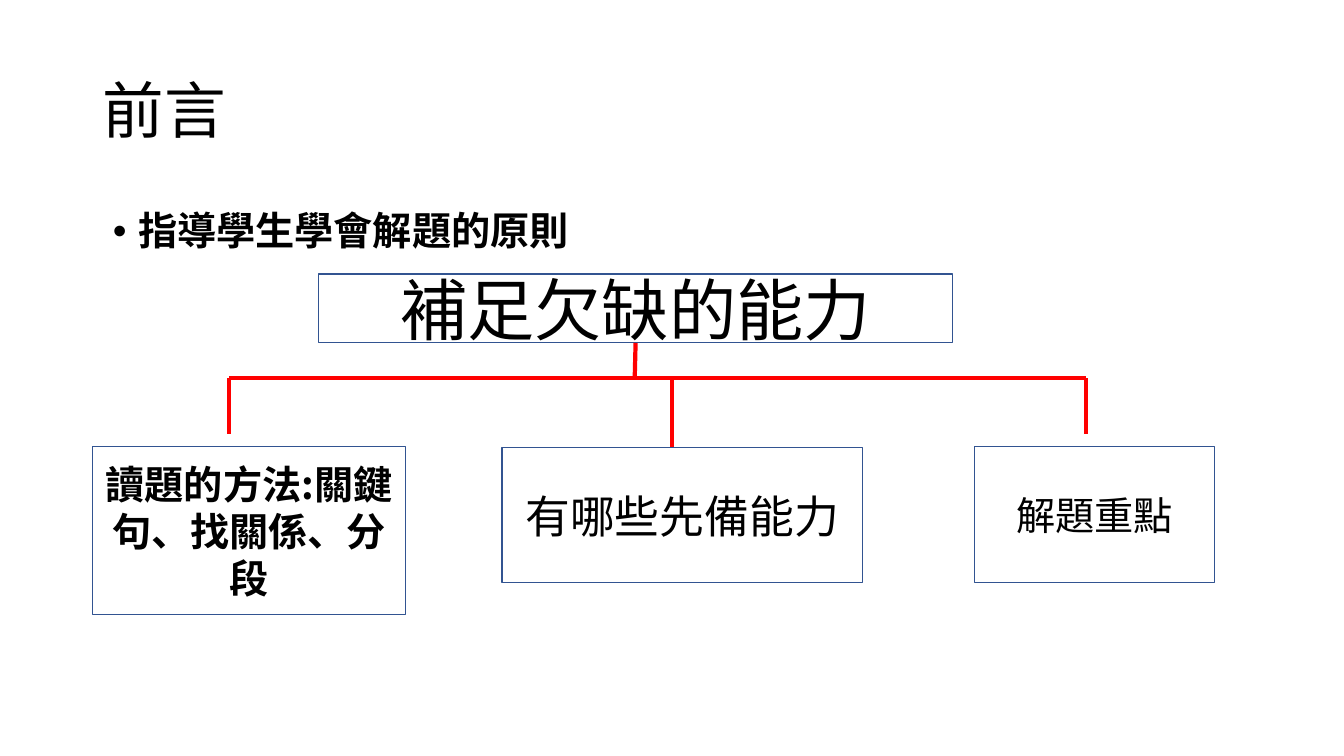
from lxml.etree import SubElement
from pptx import Presentation
from pptx.dml.color import RGBColor
from pptx.enum.shapes import MSO_CONNECTOR, MSO_SHAPE
from pptx.enum.text import MSO_ANCHOR, MSO_AUTO_SIZE, PP_ALIGN
from pptx.oxml.ns import qn
from pptx.util import Pt

CJK_FONT = "Noto Sans CJK SC"


def color(hex_code):
    return RGBColor.from_string(hex_code)


def write(shape, text, anchor, alignment, font_values):
    """Fill a shape with one formatted paragraph and return that paragraph."""
    frame = shape.text_frame
    frame.word_wrap = True
    frame.auto_size = MSO_AUTO_SIZE.NONE
    frame.vertical_anchor = anchor
    paragraph = frame.paragraphs[0]
    paragraph.alignment = alignment
    paragraph.space_before = Pt(0)
    span = paragraph.add_run()
    span.text = text
    for name, value in font_values.items():
        setattr(span.font, name, value)
    span.font.color.rgb = color("000000")
    SubElement(span.font._element, qn("a:ea"), typeface=CJK_FONT)
    return paragraph


deck = Presentation()
deck.slide_width, deck.slide_height = Pt(960), Pt(540)
page = deck.slides.add_slide(deck.slide_layouts[1])

# Title and bullet
title, body = page.placeholders
for placeholder, place in ((title, (66, 28.8, 828, 104.4)),
                           (body, (73.4, 147.6, 828, 342.7))):
    placeholder.left, placeholder.top, placeholder.width, placeholder.height = map(Pt, place)

heading = write(title, "前言", MSO_ANCHOR.MIDDLE, PP_ALIGN.LEFT,
                {"name": "Calibri", "size": Pt(44), "bold": False})
principle = write(body, "指導學生學會解題的原則", MSO_ANCHOR.TOP, PP_ALIGN.LEFT,
                  {"name": CJK_FONT, "size": Pt(28), "bold": True})
for paragraph in (heading, principle):
    paragraph.line_spacing = 0.9
bullet_format = principle._p.get_or_add_pPr()
bullet_format.set("marL", str(Pt(18)))
bullet_format.set("indent", str(-Pt(18)))
SubElement(bullet_format, qn("a:buFont"), typeface="Arial")
SubElement(bullet_format, qn("a:buChar"), char="•")

# Goal and the three abilities below it
boxes = [
    ("補足欠缺的能力", (227.5, 195.8, 453, 49), "Calibri", 48, False),
    ("讀題的方法:關鍵句、找關係、分段", (66.2, 319, 223.4, 120), CJK_FONT, 28, True),
    ("有哪些先備能力", (358.5, 319.8, 257.8, 96.3), CJK_FONT, 32, False),
    ("解題重點", (696.2, 319, 171.4, 97.2), CJK_FONT, 28, False),
]
for text, place, font_name, size, bold in boxes:
    box = page.shapes.add_shape(MSO_SHAPE.RECTANGLE, *map(Pt, place))
    box.shadow.inherit = False
    box.fill.background()
    box.line.color.rgb = color("325491")
    box.line.width = Pt(1)
    write(box, text, MSO_ANCHOR.MIDDLE, PP_ALIGN.CENTER,
          {"name": font_name, "size": Pt(size), "bold": bold})

# Red tree: crossbar, stem, then one drop per ability
bar_y, left_x, right_x = 270, 163.5, 775.5
branches = [(left_x, bar_y, right_x, bar_y), (454, 245, 453.4, bar_y)]
branches += [(x, bar_y, x, end_y)
             for x, end_y in ((left_x, 310.3), (480, 319), (right_x, 310.3))]
tree = page.shapes.add_group_shape()
for ends in branches:
    branch = tree.shapes.add_connector(MSO_CONNECTOR.STRAIGHT, *map(Pt, ends))
    branch.line.color.rgb = color("FF0000")
    branch.line.width = Pt(3)
    SubElement(branch._element.spPr, qn("a:effectLst"))

deck.save("out.pptx")
